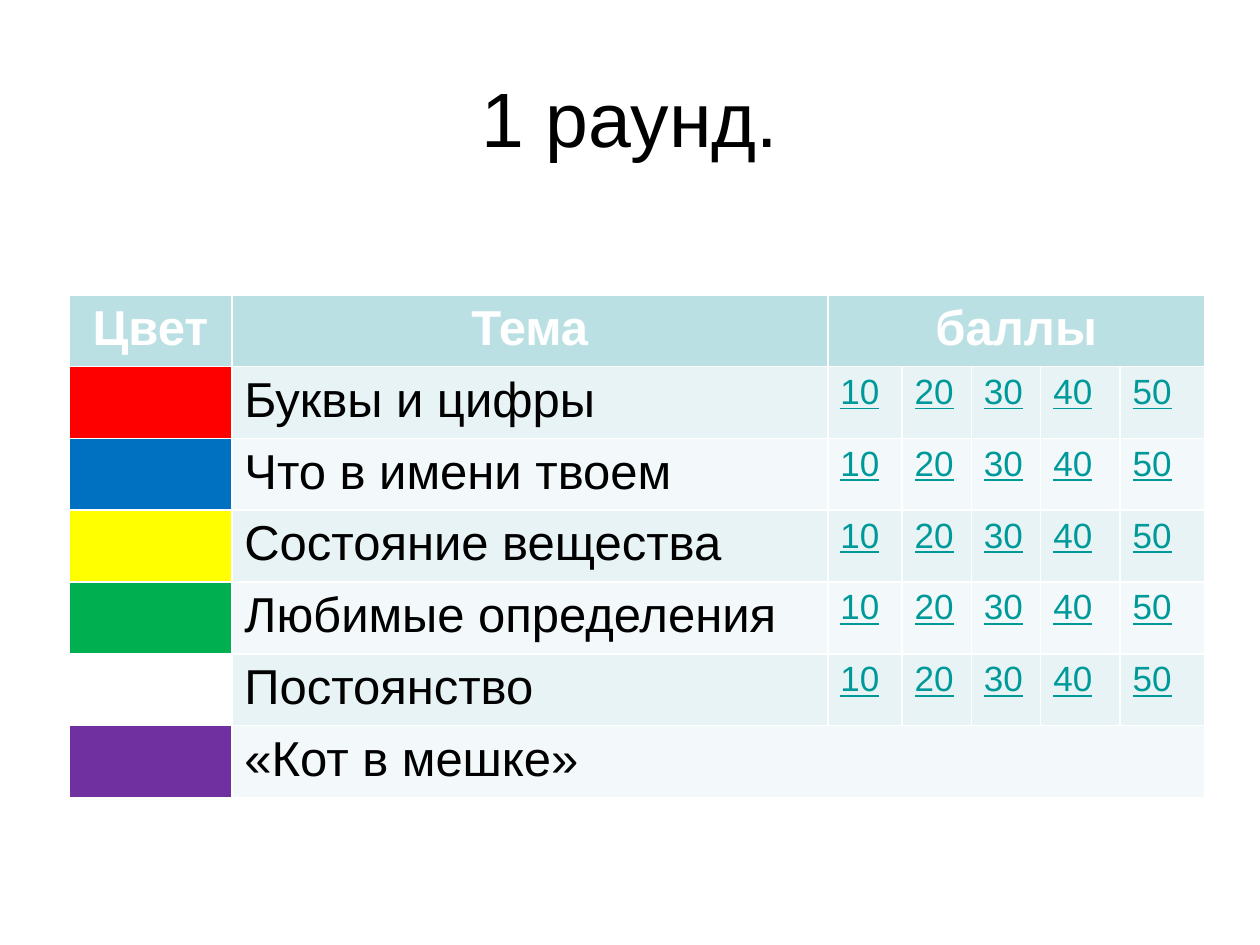
"""Build the first-round score board of a quiz."""
from pptx import Presentation
from pptx import util as u
from pptx.dml.color import RGBColor
from pptx.enum import text

BLACK, WHITE, TEAL = "000000", "FFFFFF", "009999"


def paint(fill, color):
    fill.solid()
    fill.fore_color.rgb = RGBColor.from_string(color)


def write(frame, words, size=28, color=BLACK, bold=False, line=False,
          align=text.PP_ALIGN.LEFT):
    para = frame.paragraphs[0]
    para.alignment = align
    run = para.add_run()
    run.text = words
    font = run.font
    font.name, font.size = "Arial", u.Pt(size)
    font.bold, font.underline = bold, line
    paint(font.fill, color)


deck = Presentation()
deck.slide_width, deck.slide_height = u.Inches(10), u.Inches(7.5)
slide = deck.slides.add_slide(deck.slide_layouts[6])
mid = text.PP_ALIGN.CENTER

title = slide.shapes.add_textbox(
    u.Inches(0.5), u.Inches(0.3), u.Inches(9), u.Inches(1.25)).text_frame
title.word_wrap = True
title.vertical_anchor = text.MSO_ANCHOR.MIDDLE
write(title, "1 раунд.", size=44, align=mid)

themes = [
    ("FF0000", "Буквы и цифры"),
    ("0070C0", "Что в имени твоем"),
    ("FFFF00", "Состояние вещества"),
    ("00B050", "Любимые определения"),
    (WHITE, "Постоянство"),
    ("7030A0", "«Кот в мешке»"),
]
widths = [1.29, 4.73, 0.59, 0.55, 0.55, 0.63, 0.67]
count = len(themes) + 1
grid = slide.shapes.add_table(
    count, len(widths), u.Inches(0.55), u.Inches(2.34),
    u.Inches(sum(widths)), u.Inches(0.57 * count)).table
for col, width in zip(grid.columns, widths):
    col.width = u.Inches(width)
for row in grid.rows:
    row.height = u.Inches(0.57)

for cell in grid.rows[0].cells:
    paint(cell.fill, "BBE0E3")
grid.cell(0, 2).merge(grid.cell(0, 6))
for col, head in enumerate(["Цвет", "Тема", "баллы"]):
    write(grid.cell(0, col).text_frame, head, color=WHITE, bold=True, align=mid)

for row, (color, theme) in enumerate(themes, 1):
    band = "E7F3F4" if row % 2 else "F3F9FA"
    for col in range(len(widths)):
        paint(grid.cell(row, col).fill, band if col else color)
    write(grid.cell(row, 1).text_frame, theme)
    if row == len(themes):
        grid.cell(row, 1).merge(grid.cell(row, 6))
        continue
    for col in range(2, 7):
        write(grid.cell(row, col).text_frame, str(10 * (col - 1)),
              size=20, color=TEAL, line=True)

deck.save("out.pptx")
